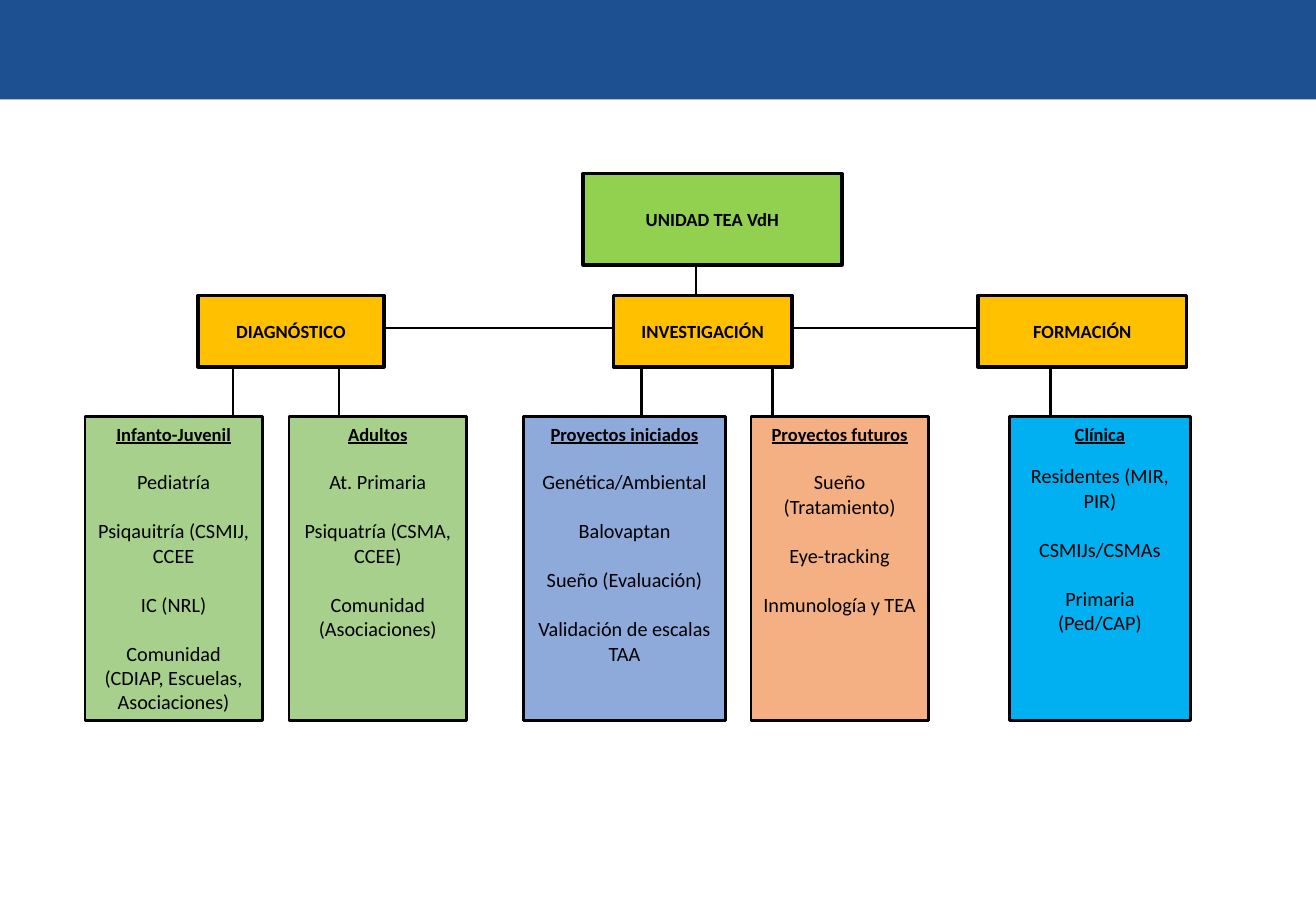
from dataclasses import dataclass

from lxml import etree
from pptx import Presentation
from pptx import util as u
from pptx.dml.color import RGBColor
from pptx.enum import shapes, text
from pptx.oxml import ns


@dataclass(frozen=True)
class Theme:
    """Colours, type sizes and line widths of the slide."""
    font: str = "Calibri"
    band: str = "1C5091"
    root: str = "92D050"
    area: str = "FFC000"
    clinical: str = "A8D08D"
    started: str = "8EAADB"
    future: str = "F4B083"
    training: str = "00B0F0"
    ink: str = "000000"
    title_size: float = 11
    item_size: float = 12
    item_gap: float = 14.65
    node_line: float = 2
    thin_line: float = 1.5


@dataclass(frozen=True)
class Box:
    """A rectangle in points."""
    left: float
    top: float
    width: float
    height: float

    @property
    def right(self):
        """Give the right edge."""
        return self.left + self.width

    @property
    def bottom(self):
        """Give the bottom edge."""
        return self.top + self.height


@dataclass(frozen=True)
class Column:
    """A list box, with its offset and its connector's offset in the branch."""
    offset: float
    width: float
    drop: float
    fill: str
    title: str
    items: tuple
    first_gap: float = Theme.item_gap


THEME = Theme()
NODE_HEIGHT = 42.5
COLUMN_OFFSET = 72
BRANCHES = (
    (Box(50.4, 175, 226.1, 252), 67, 110.2, "DIAGNÓSTICO", (
        Column(0, 105.1, 87.6, THEME.clinical, "Infanto-Juvenil",
               ("Pediatría", "Psiqauitría (CSMIJ, CCEE", "IC (NRL)",
                "Comunidad (CDIAP, Escuelas, Asociaciones)")),
        Column(121, 105.1, 150.5, THEME.clinical, "Adultos",
               ("At. Primaria", "Psiquatría (CSMA, CCEE)",
                "Comunidad (Asociaciones)")))),
    (Box(310.3, 175, 240, 252), 53.3, 105.8, "INVESTIGACIÓN", (
        Column(0, 119.7, 69.9, THEME.started, "Proyectos iniciados",
               ("Genética/Ambiental", "Balovaptan", "Sueño (Evaluación)",
                "Validación de escalas TAA")),
        Column(134.7, 105.3, 147.6, THEME.future, "Proyectos futuros",
               ("Sueño (Tratamiento)", "Eye-tracking", "Inmunología y TEA")))),
    (Box(579.6, 175, 126, 252), 0, 123.8, "FORMACIÓN", (
        Column(18.7, 107.3, 43.2, THEME.training, "Clínica",
               ("Residentes (MIR, PIR)", "CSMIJs/CSMAs", "Primaria (Ped/CAP)"),
               first_gap=11),)),
)


def add_box(slide, box, fill, line_width=0):
    """Draw a filled rectangle, outlined if a line width is given."""
    shape = slide.shapes.add_shape(
        shapes.MSO_SHAPE.RECTANGLE, u.Pt(box.left), u.Pt(box.top),
        u.Pt(box.width), u.Pt(box.height))
    shape.shadow.inherit = False
    shape.fill.solid()
    shape.fill.fore_color.rgb = RGBColor.from_string(fill)
    if line_width:
        shape.line.color.rgb = RGBColor.from_string(THEME.ink)
        shape.line.width = u.Pt(line_width)
    else:
        shape.line.fill.background()
    return shape


def add_line(slide, start_x, start_y, end_x, end_y):
    """Draw a plain straight connector."""
    line = slide.shapes.add_connector(
        shapes.MSO_CONNECTOR.STRAIGHT, u.Pt(start_x), u.Pt(start_y),
        u.Pt(end_x), u.Pt(end_y))
    line.line.color.rgb = RGBColor.from_string(THEME.ink)
    line.line.width = u.Pt(THEME.thin_line)
    etree.SubElement(line._element.spPr, ns.qn("a:effectLst"))


def style_paragraph(paragraph, words, size, bold=False, underline=False, gap=0):
    """Fill a centred paragraph and set its font."""
    paragraph.text = words
    paragraph.alignment = text.PP_ALIGN.CENTER
    paragraph.space_before = u.Pt(gap)
    paragraph.font.name = THEME.font
    paragraph.font.size = u.Pt(size)
    paragraph.font.bold = bold
    paragraph.font.underline = underline
    paragraph.font.color.rgb = RGBColor.from_string(THEME.ink)


def add_node(slide, box, fill, title):
    """Draw a titled chart node."""
    frame = add_box(slide, box, fill, THEME.node_line).text_frame
    frame.word_wrap = True
    frame.vertical_anchor = text.MSO_ANCHOR.MIDDLE
    style_paragraph(frame.paragraphs[0], title, THEME.title_size, bold=True)


def add_column(slide, box, column):
    """Draw a list box with an underlined heading."""
    frame = add_box(slide, box, column.fill, THEME.thin_line).text_frame
    frame.word_wrap = True
    frame.vertical_anchor = text.MSO_ANCHOR.TOP
    style_paragraph(frame.paragraphs[0], column.title, THEME.title_size,
                    bold=True, underline=True)
    for index, item in enumerate(column.items):
        gap = THEME.item_gap if index else column.first_gap
        style_paragraph(frame.add_paragraph(), item, THEME.item_size, gap=gap)


def add_branch(slide, box, node_offset, node_width, title, columns):
    """Draw an area node above its columns and return the node's box."""
    node = Box(box.left + node_offset, box.top, node_width, NODE_HEIGHT)
    add_node(slide, node, THEME.area, title)
    top = box.top + COLUMN_OFFSET
    for column in columns:
        add_column(slide, Box(box.left + column.offset, top, column.width,
                              box.height - COLUMN_OFFSET), column)
        drop = box.left + column.drop
        add_line(slide, drop, node.bottom, drop, top)
    return node


def add_chart(slide, root):
    """Draw the organisation chart under its root box."""
    add_node(slide, root, THEME.root, "UNIDAD TEA VdH")
    nodes = [add_branch(slide, *branch) for branch in BRANCHES]
    stem = root.left + 67
    add_line(slide, stem, root.bottom, stem, nodes[1].top)
    for left, right in zip(nodes, nodes[1:]):
        middle = left.top + 19.5
        add_line(slide, left.right, middle, right.left, middle)


def main():
    """Build and save the slide."""
    presentation = Presentation()
    presentation.slide_width = u.Pt(780)
    presentation.slide_height = u.Pt(540)
    slide = presentation.slides.add_slide(presentation.slide_layouts[6])
    add_box(slide, Box(0, 0, 780, 59), THEME.band)
    add_chart(slide, Box(345.6, 103, 153.4, 54))
    presentation.save("out.pptx")


if __name__ == "__main__":
    main()
